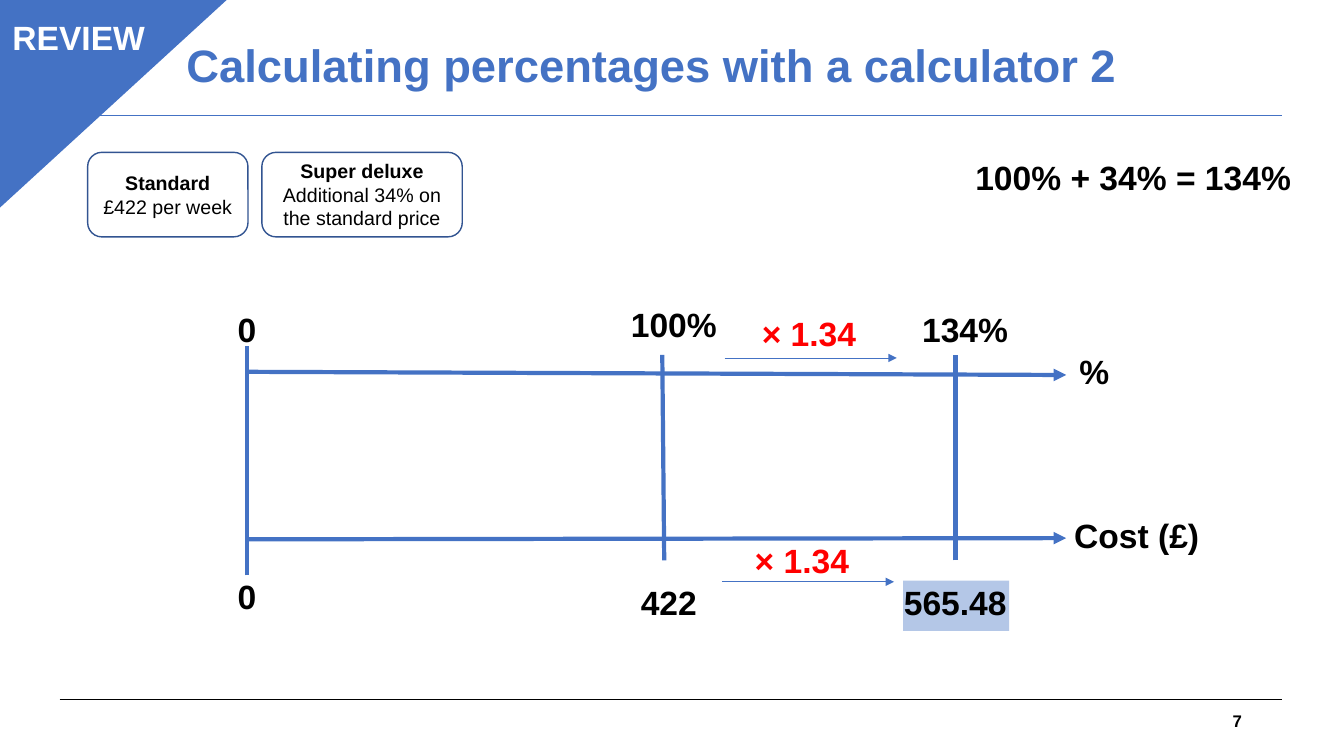
"""Build a review slide on percentage increases with a double number line."""
import pptx
import pptx.dml.color
import pptx.enum.shapes
import pptx.enum.text
import pptx.oxml
import pptx.oxml.ns
import pptx.util

Cm = pptx.util.Cm
Pt = pptx.util.Pt
SHAPE = pptx.enum.shapes.MSO_SHAPE
ALIGN = pptx.enum.text.PP_ALIGN
ANCHOR = pptx.enum.text.MSO_ANCHOR

BLUE = "4472C4"
BLACK = "000000"
WHITE = "FFFFFF"
RED = "FF0000"
LINE_HEIGHT = 1.27


def colour(hex_code):
    """Turn a hex string into a colour."""
    return pptx.dml.color.RGBColor.from_string(hex_code)


def write_text(shape, text, size=24, ink=BLACK, align=ALIGN.LEFT,
               anchor=ANCHOR.TOP, bold_lines=None, wrap=True, spacing=None):
    """Write lines into a shape, with the first bold_lines (or all) in bold."""
    frame = shape.text_frame
    frame.word_wrap = wrap
    frame.vertical_anchor = anchor
    for index, line in enumerate(text.split("\n")):
        paragraph = frame.add_paragraph() if index else frame.paragraphs[0]
        paragraph.alignment = align
        paragraph.line_spacing = spacing
        run = paragraph.add_run()
        run.text = line
        run.font.name = "Arial"
        run.font.size = Pt(size)
        run.font.bold = bold_lines is None or index < bold_lines
        run.font.color.rgb = colour(ink)


def add_label(slide, text, left, top, width, height=LINE_HEIGHT, **text_format):
    """Add a text box."""
    label = slide.shapes.add_textbox(Cm(left), Cm(top), Cm(width), Cm(height))
    write_text(label, text, **text_format)


def add_block(slide, preset, left, top, width, height, fill, outline=None, weight=1):
    """Add a filled preset shape, outlined only when a colour is given."""
    block = slide.shapes.add_shape(preset, Cm(left), Cm(top), Cm(width), Cm(height))
    block.shadow.inherit = False
    block.fill.solid()
    block.fill.fore_color.rgb = colour(fill)
    if outline:
        block.line.color.rgb = colour(outline)
        block.line.width = Pt(weight)
    else:
        block.line.fill.background()
    return block


def add_line(slide, start, end, weight, ink=BLUE, arrow=False):
    """Add a straight line, with an arrowhead at its end if asked."""
    line = slide.shapes.add_connector(
        pptx.enum.shapes.MSO_CONNECTOR.STRAIGHT, *map(Cm, start + end))
    line.line.color.rgb = colour(ink)
    line.line.width = Pt(weight)
    if arrow:
        tail = pptx.oxml.ns.qn("a:tailEnd")
        line.line._get_or_add_ln().append(
            pptx.oxml.parse_xml(f"<a:tailEnd {pptx.oxml.ns.nsdecls('a')} type='triangle'/>"
                                ) if tail else None)
    line._element.spPr.append(
        pptx.oxml.parse_xml(f"<a:effectLst {pptx.oxml.ns.nsdecls('a')}/>"))


def add_frame(slide):
    """Add the rules, title, page number and review corner."""
    for rule_top, ink in ((17.63, BLACK), (2.9, BLUE)):
        add_line(slide, (1.5, rule_top), (32.31, rule_top), 0.75, ink)
    add_label(slide, "Calculating percentages with a calculator 2", 4.45, 0.3, 25.4, 2.82,
              size=32.4, ink=BLUE, anchor=ANCHOR.MIDDLE, spacing=0.9)
    add_label(slide, "7", 23.93, 17.65, 7.62, 1.02,
              size=12, align=ALIGN.RIGHT, anchor=ANCHOR.MIDDLE)
    corner = add_block(slide, SHAPE.ISOSCELES_TRIANGLE, -0.08, -0.05, 5.82, 5.33, BLUE, BLUE)
    corner.adjustments[0] = 1
    corner.rotation = 180
    review = add_block(slide, SHAPE.RECTANGLE, 0.03, 0.3, 3.91, LINE_HEIGHT, BLUE, BLUE, 0.75)
    write_text(review, "REVIEW", ink=WHITE, align=ALIGN.CENTER)


def add_prices(slide):
    """Add the two price cards and the percentage sum."""
    for offer, left, width in (
            ("Standard\n£422 per week", 2.21, 4.04),
            ("Super deluxe\nAdditional 34% on the standard price", 6.6, 5.05)):
        card = add_block(slide, SHAPE.ROUNDED_RECTANGLE, left, 3.84, width, 2.13,
                         WHITE, "325491")
        write_text(card, offer, size=14, align=ALIGN.CENTER, anchor=ANCHOR.MIDDLE,
                   bold_lines=1)
    add_label(slide, "100% + 34% = 134%", 24.33, 3.84, 8.56)


def add_number_line(slide):
    """Add the double number line with its values and multipliers."""
    add_block(slide, SHAPE.RECTANGLE, 22.76, 14.63, 2.67, LINE_HEIGHT, "B4C7E7")
    for start_y, end_y in ((9.37, 9.45), (13.59, 13.56)):
        add_line(slide, (6.22, start_y), (26.87, end_y), 3, arrow=True)
    for bottom, top in (((6.22, 14.5), (6.22, 8.71)),
                        ((16.74, 14.12), (16.69, 8.94)),
                        ((24.08, 14.12), (24.08, 8.94))):
        add_line(slide, bottom, top, 3)

    add_label(slide, "%", 26.95, 8.71, 1.27, wrap=False)
    for value, left, top, width in (
            ("Cost (£)", 26.82, 12.85, 3.76),
            ("0", 5.74, 7.65, 1.07),
            ("0", 5.74, 14.4, 1.07),
            ("100%", 15.65, 7.54, 2.87),
            ("422", 15.9, 14.55, 2.87),
            ("134%", 22.99, 7.65, 2.87),
            ("565.48", 22.53, 14.53, 3.4)):
        add_label(slide, value, left, top, width)

    for left, top, arrow_left, arrow_y in ((18.95, 7.77, 18.26, 9.02),
                                           (18.77, 13.49, 18.19, 14.66)):
        add_label(slide, "× 1.34", left, top, 3.43, ink=RED)
        add_line(slide, (arrow_left, arrow_y), (arrow_left + 4.34, arrow_y), 0.5, arrow=True)


def main():
    """Build and save the slide."""
    presentation = pptx.Presentation()
    presentation.slide_width = Cm(33.87)
    presentation.slide_height = Cm(19.05)
    slide = presentation.slides.add_slide(presentation.slide_layouts[6])
    add_frame(slide)
    add_prices(slide)
    add_number_line(slide)
    presentation.save("out.pptx")


if __name__ == "__main__":
    main()
